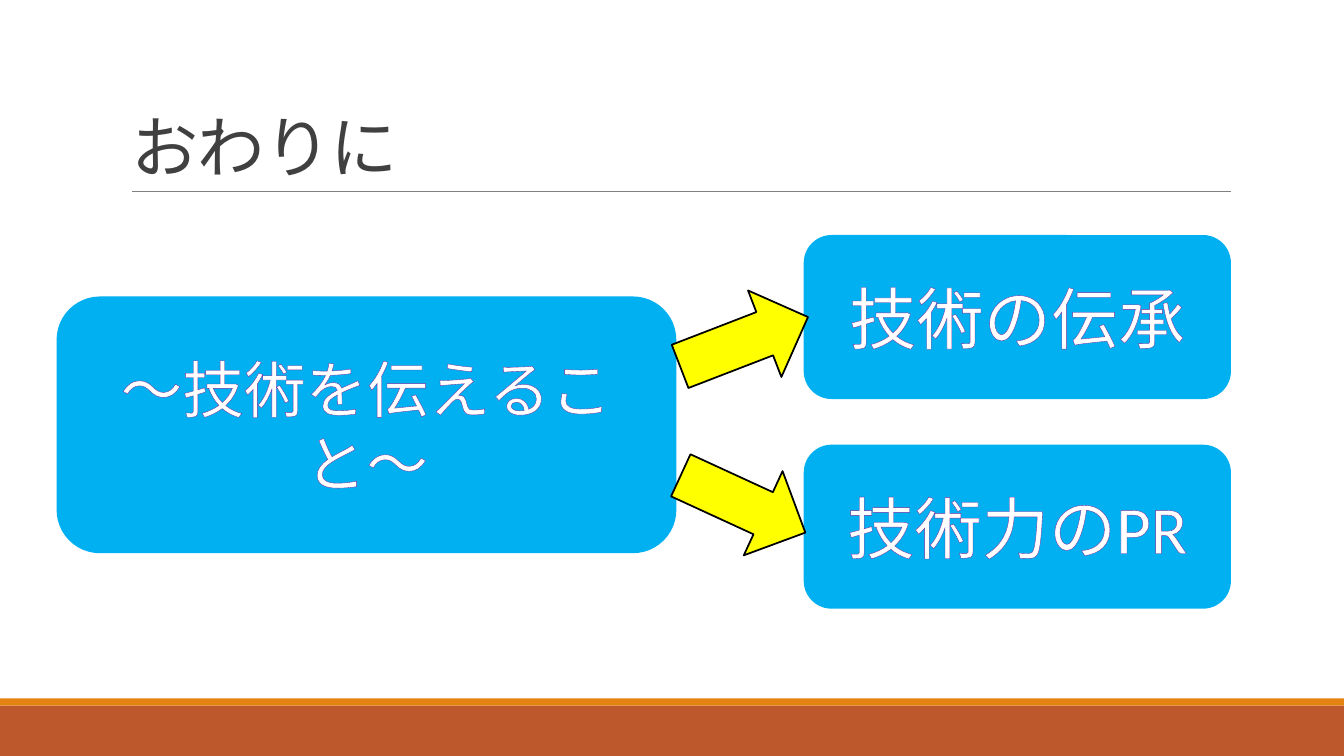
from dataclasses import dataclass
from lxml import etree
from pptx import Presentation
from pptx import util as u
from pptx.dml.color import RGBColor
from pptx.enum import shapes, text
from pptx.oxml import ns

TITLE = "おわりに"
TITLE_BOX = (1.2, 0.31, 11, 1.59)
BANDS = [((0, 7, 13.33, 0.5), "BD582C"), ((0, 6.93, 13.33, 0.07), "E48312")]
CARDS = [
    ("～技術を伝えること～", (0.57, 2.95, 6.13, 2.53), 44),
    ("技術力のPR", (7.98, 4.42, 4.22, 1.61), 48),
    ("技術の伝承", (7.98, 2.34, 4.22, 1.61), 48),
]
ARROWS = [((6.7, 2.93, 1.36, 0.92), 338.9), ((6.69, 4.54, 1.36, 0.92), 24.7)]
KIND = shapes.MSO_SHAPE


@dataclass(frozen=True)
class Theme:
    font: str = "Calibri"
    title: str = "404040"
    rule: str = "808080"
    card: str = "00B0F0"
    ink: str = "FFFFFF"
    glow: str = "7030A0"
    arrow: str = "FFFF00"
    edge: str = "000000"
    head: int = 48
    line: float = 1.25


theme = Theme()


def color(value):
    return RGBColor.from_string(value)


def place(box):
    return [u.Inches(n) for n in box]


def style(para, size, ink):
    para.font.name = theme.font
    para.font.size = u.Pt(size)
    para.font.color.rgb = color(ink)


def add_box(slide, kind, box, fill, line=None):
    shape = slide.shapes.add_shape(kind, *place(box))
    shape.shadow.inherit = False
    shape.fill.solid()
    shape.fill.fore_color.rgb = color(fill)
    if line:
        shape.line.color.rgb = color(line)
        shape.line.width = u.Pt(theme.line)
    else:
        shape.line.fill.background()
    return shape


def outline(run):
    props = run._r.get_or_add_rPr()
    line = etree.Element(ns.qn("a:ln"), w=str(u.Pt(0.75)))
    fill = etree.SubElement(line, ns.qn("a:solidFill"))
    etree.SubElement(fill, ns.qn("a:srgbClr"), val=theme.glow)
    props.insert(0, line)


def add_card(slide, words, box, size):
    shape = add_box(slide, KIND.ROUNDED_RECTANGLE, box, theme.card, theme.card)
    frame = shape.text_frame
    frame.word_wrap = True
    frame.vertical_anchor = text.MSO_ANCHOR.MIDDLE
    para = frame.paragraphs[0]
    para.alignment = text.PP_ALIGN.CENTER
    run = para.add_run()
    run.text = words
    style(para, size, theme.ink)
    outline(run)


def add_rule(slide):
    ends = place((1.31, 1.9, 12.21, 1.9))
    rule = slide.shapes.add_connector(shapes.MSO_CONNECTOR.STRAIGHT, *ends)
    rule.line.color.rgb = color(theme.rule)
    rule.line.width = u.Pt(0.5)
    etree.SubElement(rule._element.spPr, ns.qn("a:effectLst"))


def set_title(slide):
    title = slide.shapes.title
    title.left, title.top, title.width, title.height = place(TITLE_BOX)
    frame = title.text_frame
    frame.text = TITLE
    frame.word_wrap = True
    frame.auto_size = text.MSO_AUTO_SIZE.NONE
    frame.vertical_anchor = text.MSO_ANCHOR.BOTTOM
    para = frame.paragraphs[0]
    para.alignment = text.PP_ALIGN.LEFT
    para.line_spacing = 0.85
    style(para, theme.head, theme.title)
    para.runs[0]._r.get_or_add_rPr().set("spc", "-50")


def main():
    deck = Presentation()
    deck.slide_width, deck.slide_height = place((13.33, 7.5))
    slide = deck.slides.add_slide(deck.slide_layouts[5])
    for box, fill in BANDS:
        add_box(slide, KIND.RECTANGLE, box, fill)
    add_rule(slide)
    set_title(slide)
    for words, box, size in CARDS:
        add_card(slide, words, box, size)
    for box, turn in ARROWS:
        arrow = add_box(slide, KIND.RIGHT_ARROW, box, theme.arrow, theme.edge)
        arrow.rotation = turn
    deck.save("out.pptx")


if __name__ == "__main__":
    main()
